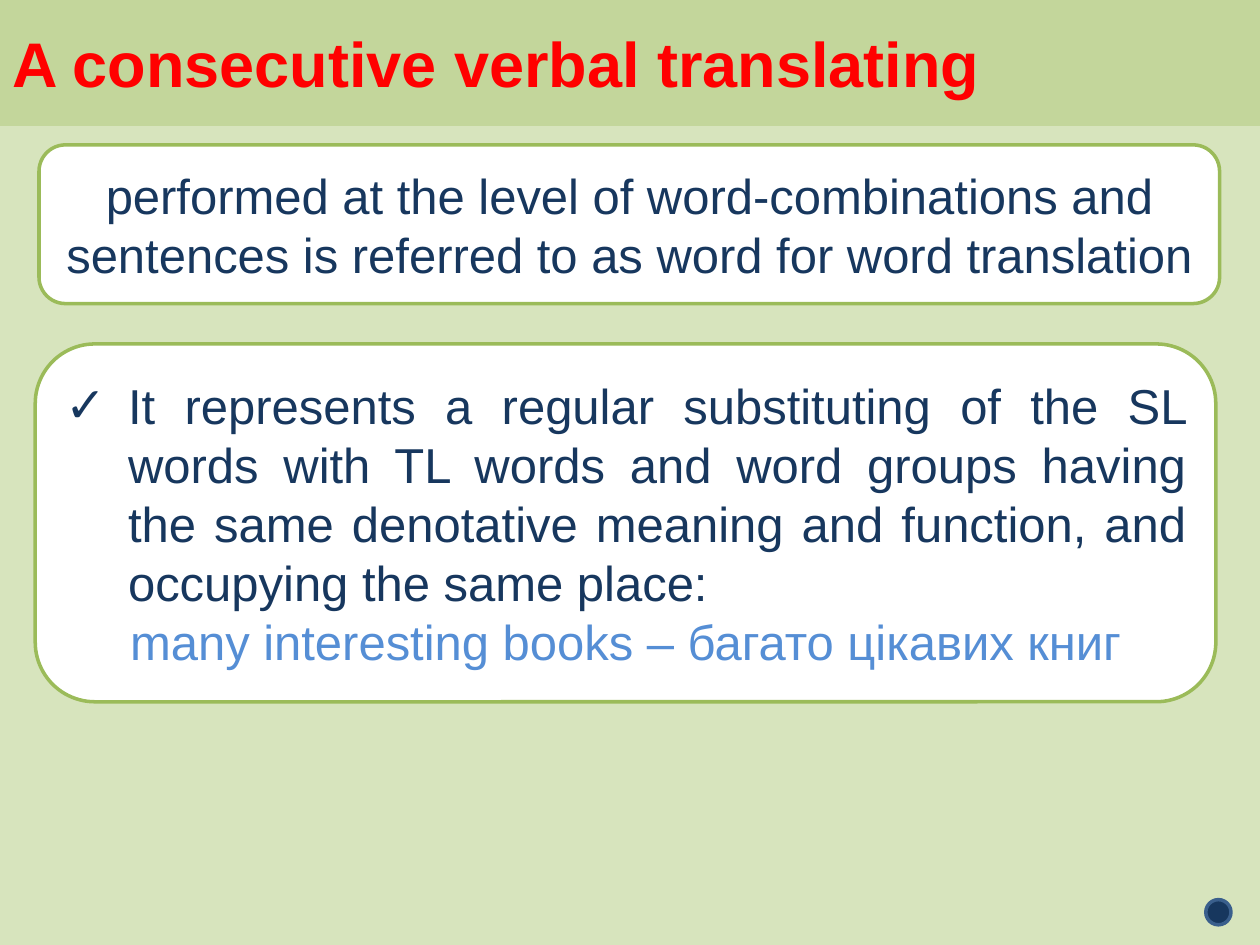
from lxml import etree
from pptx import Presentation
from pptx.dml.color import RGBColor
from pptx.enum.shapes import MSO_SHAPE
from pptx.enum.text import MSO_ANCHOR, PP_ALIGN
from pptx.oxml.ns import qn
from pptx.util import Inches, Pt

PALE_GREEN = RGBColor(0xD7, 0xE4, 0xBD)
BAND_GREEN = RGBColor(0xC3, 0xD6, 0x9B)
BORDER_GREEN = RGBColor(0x9B, 0xBB, 0x59)
WHITE = RGBColor(0xFF, 0xFF, 0xFF)
RED = RGBColor(0xFF, 0x00, 0x00)
NAVY = RGBColor(0x17, 0x37, 0x5E)
LIGHT_BLUE = RGBColor(0x55, 0x8E, 0xD5)
RING_BLUE = RGBColor(0x3A, 0x5F, 0x8C)


def add_box(slide, kind, left, top, width, height, fill, line):
    shape = slide.shapes.add_shape(
        kind, Inches(left), Inches(top), Inches(width), Inches(height)
    )
    shape.shadow.inherit = False
    shape.fill.solid()
    shape.fill.fore_color.rgb = fill
    shape.line.color.rgb = line
    shape.line.width = Pt(2)
    shape.text_frame.word_wrap = True
    shape.text_frame.vertical_anchor = MSO_ANCHOR.MIDDLE
    return shape


def write_text(paragraph, text, size=28, color=NAVY, bold=False, align=PP_ALIGN.CENTER):
    paragraph.alignment = align
    run = paragraph.add_run()
    run.text = text
    run.font.name = "Arial"
    run.font.size = Pt(size)
    run.font.bold = bold
    run.font.color.rgb = color


presentation = Presentation()
presentation.slide_width = Inches(10)
presentation.slide_height = Inches(7.5)
slide = presentation.slides.add_slide(presentation.slide_layouts[6])
slide.background.fill.solid()
slide.background.fill.fore_color.rgb = PALE_GREEN

title_band = add_box(slide, MSO_SHAPE.RECTANGLE, 0, 0, 10, 0.99, BAND_GREEN, BAND_GREEN)
write_text(
    title_band.text_frame.paragraphs[0],
    "A consecutive verbal translating",
    size=36,
    color=RED,
    bold=True,
    align=PP_ALIGN.LEFT,
)

definition = add_box(
    slide, MSO_SHAPE.ROUNDED_RECTANGLE, 0.31, 1.15, 9.37, 1.26, WHITE, BORDER_GREEN
)
write_text(
    definition.text_frame.paragraphs[0],
    "performed at the level of word-combinations and sentences "
    "is referred to as word for word translation",
)

explanation = add_box(
    slide, MSO_SHAPE.ROUNDED_RECTANGLE, 0.28, 2.73, 9.37, 2.84, WHITE, BORDER_GREEN
)
bullet_paragraph = explanation.text_frame.paragraphs[0]
write_text(
    bullet_paragraph,
    "It represents a regular substituting of the SL words with TL words and word groups "
    "having the same denotative meaning and function, and occupying the same place: ",
    align=PP_ALIGN.JUSTIFY,
)
properties = bullet_paragraph._p.get_or_add_pPr()
properties.set("marL", str(Inches(0.5)))
properties.set("indent", str(Inches(-0.5)))
etree.SubElement(properties, qn("a:buFont")).set("typeface", "Arial")
etree.SubElement(properties, qn("a:buChar")).set("char", "✓")
write_text(
    explanation.text_frame.add_paragraph(),
    "many interesting books – багато цікавих книг",
    color=LIGHT_BLUE,
)

add_box(slide, MSO_SHAPE.OVAL, 9.57, 7.14, 0.2, 0.2, NAVY, RING_BLUE)

presentation.save("out.pptx")
